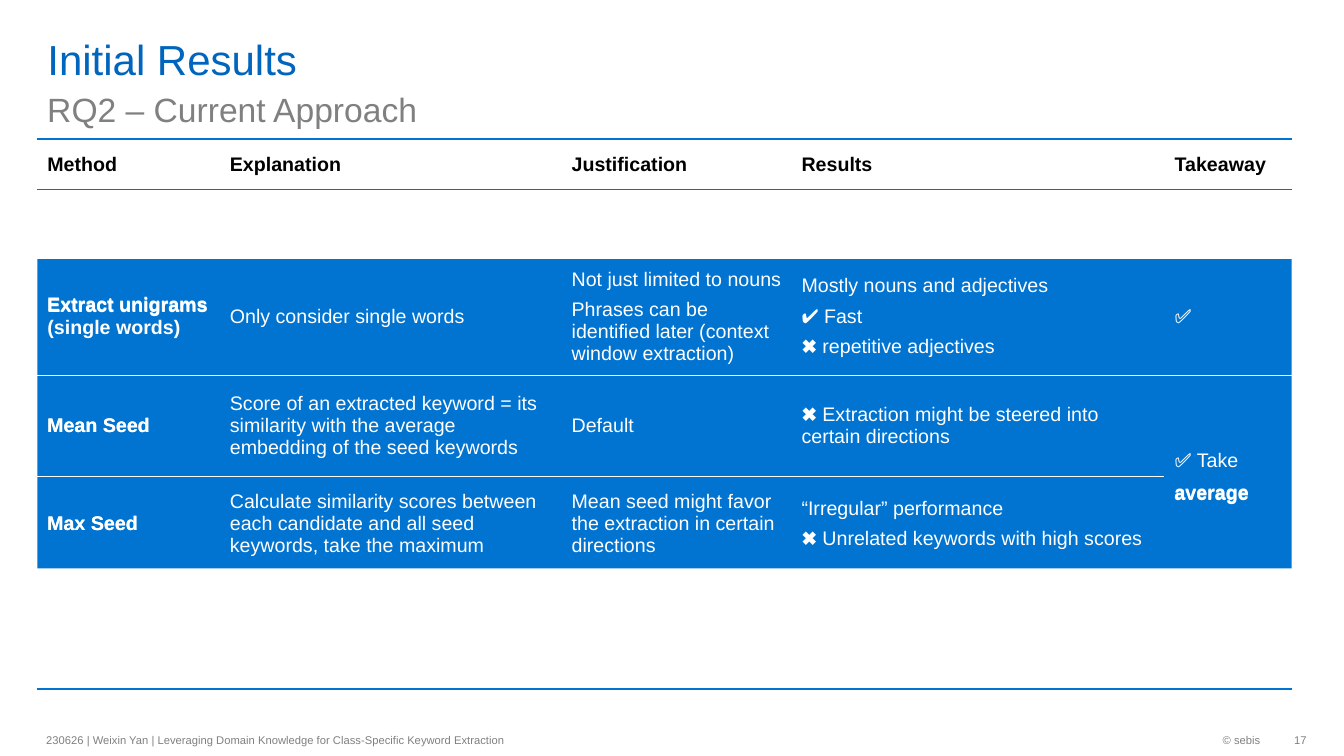
"""Build the initial results slide with its method comparison table."""
from dataclasses import dataclass, field

from lxml import etree
from pptx import Presentation
from pptx.dml.color import RGBColor
from pptx.enum import shapes, text
from pptx.oxml import ns
from pptx.util import Inches, Pt

TITLE_BLUE = RGBColor(0x00, 0x65, 0xBD)
BLUE = RGBColor(0x01, 0x73, 0xD0)
GREY = RGBColor(0x80, 0x80, 0x80)
DARK = RGBColor(0x59, 0x59, 0x59)
BLACK = RGBColor(0, 0, 0)
WHITE = RGBColor(0xFF, 0xFF, 0xFF)

NO_GRID_STYLE = "{2D5ABB26-0587-4C30-8999-92F81FD0307C}"
LEFT, ALIGN_RIGHT = text.PP_ALIGN.LEFT, text.PP_ALIGN.RIGHT
TOP, MIDDLE, BOTTOM = text.MSO_ANCHOR.TOP, text.MSO_ANCHOR.MIDDLE, text.MSO_ANCHOR.BOTTOM


@dataclass
class Label:
    text: str
    at: tuple[float, float, float, float]
    size: float = 14
    color: RGBColor = WHITE
    bold: bool = False
    align: text.PP_ALIGN = LEFT
    anchor: text.MSO_ANCHOR = TOP
    frame: dict = field(default_factory=dict)


@dataclass
class Rule:
    color: RGBColor
    width: float


@dataclass
class Row:
    height: float
    cells: tuple[str, ...] = ("",) * 5
    color: RGBColor = WHITE
    top: Rule | None = None
    bottom: Rule | None = None


HEADING = {"margin_top": 0, "margin_bottom": 0}
TITLE = Label("Initial Results", (0.37, 0.04, 11.58, 0.79), 30, TITLE_BLUE,
              anchor=BOTTOM, frame=HEADING)
LABELS = [
    Label("RQ2 – Current Approach", (0.37, 0.83, 11.58, 0.45), 24, GREY,
          anchor=BOTTOM, frame=HEADING),
    Label("© sebis", (10.26, 7.18, 2.34, 0.32), 8, GREY, align=ALIGN_RIGHT, anchor=MIDDLE),
    Label("17", (12.6, 7.18, 0.36, 0.32), 8, GREY, align=ALIGN_RIGHT, anchor=MIDDLE,
          frame={"margin_right": 0}),
    Label("230626 | Weixin Yan | Leveraging Domain Knowledge for Class-Specific Keyword Extraction",
          (0.36, 7.18, 6.3, 0.32), 8, GREY, anchor=MIDDLE),
]
HIGHLIGHTS = [
    Label("Extract unigrams", (0.37, 2.85, 2.78, 0.34), bold=True),
    Label("Mean Seed", (0.37, 4.05, 1.44, 0.34), bold=True),
    Label("Max Seed", (0.37, 5.02, 1.44, 0.34), bold=True),
    Label("average", (11.55, 4.72, 1.21, 0.34), bold=True),
]

FRAME_RULE, HEADER_RULE, ROW_RULE = Rule(BLUE, 1.5), Rule(DARK, 0.75), Rule(WHITE, 0.5)
COLUMNS = (1.81, 3.39, 2.28, 3.7, 1.26)
ROWS = [
    Row(0.5, ("Method", "Explanation", "Justification", "Results", "Takeaway"),
        BLACK, FRAME_RULE, HEADER_RULE),
    Row(0.68, top=HEADER_RULE),
    Row(1.16, ("Extract unigrams (single words)",
               "Only consider single words",
               "Not just limited to nouns\nPhrases can be identified later (context window extraction)",
               "Mostly nouns and adjectives\n✔ Fast\n✖️ repetitive adjectives",
               "✅"), bottom=ROW_RULE),
    Row(1.01, ("Mean Seed",
               "Score of an extracted keyword = its similarity with the average embedding"
               " of the seed keywords",
               "Default",
               "✖️ Extraction might be steered into certain directions",
               "✅ Take"), top=ROW_RULE, bottom=ROW_RULE),
    Row(0.93, ("Max Seed",
               "Calculate similarity scores between each candidate and all seed keywords,"
               " take the maximum",
               "Mean seed might favor the extraction in certain directions",
               "“Irregular” performance\n✖️ Unrelated keywords with high scores",
               "average"), top=ROW_RULE),
    Row(1.18, bottom=FRAME_RULE),
]
TAKE, AVERAGE = (3, 4), (4, 4)


def apply(target, values: dict) -> None:
    for name, value in values.items():
        setattr(target, name, value)


def style(p, size: float, color: RGBColor, bold: bool) -> None:
    apply(p.font, {"name": "Arial", "size": Pt(size), "bold": bold})
    p.font.color.rgb = color


def place(sp, label: Label) -> None:
    apply(sp, dict(zip(("left", "top", "width", "height"), map(Inches, label.at))))
    tf = sp.text_frame
    tf.text = label.text
    apply(tf, {"word_wrap": True, "auto_size": text.MSO_AUTO_SIZE.NONE,
               "vertical_anchor": label.anchor} | label.frame)
    p = tf.paragraphs[0]
    p.alignment = label.align
    style(p, label.size, label.color, label.bold)


def add_labels(s, labels: list[Label]) -> None:
    for label in labels:
        place(s.shapes.add_textbox(0, 0, 0, 0), label)


def add_border(cell, tag: str, rule: Rule | None) -> None:
    ln = etree.SubElement(cell._tc.get_or_add_tcPr(), ns.qn(tag))
    if rule is None:
        ln.set("w", "0")
        etree.SubElement(ln, ns.qn("a:noFill"))
        return
    ln.set("w", str(Pt(rule.width)))
    fill = etree.SubElement(ln, ns.qn("a:solidFill"))
    etree.SubElement(fill, ns.qn("a:srgbClr"), val=str(rule.color))


def add_results(s) -> None:
    table = s.shapes.add_table(len(ROWS), len(COLUMNS), Inches(0.37), Inches(1.38),
                               Inches(12.44), Inches(5.46)).table
    apply(table, {"first_row": False, "horz_banding": False})
    table._tbl.tblPr.find(ns.qn("a:tableStyleId")).text = NO_GRID_STYLE
    for column, width in zip(table.columns, COLUMNS):
        column.width = Inches(width)
    for i, row in enumerate(ROWS):
        table.rows[i].height = Inches(row.height)
        for j, words in enumerate(row.cells):
            cell = table.cell(i, j)
            add_border(cell, "a:lnT", None if (i, j) == AVERAGE else row.top)
            add_border(cell, "a:lnB", None if (i, j) == TAKE else row.bottom)
            cell.fill.background()
            apply(cell, {"text": words, "margin_right": Inches(0.05),
                         "vertical_anchor": {TAKE: BOTTOM, AVERAGE: TOP}.get((i, j), MIDDLE)})
            for p in cell.text_frame.paragraphs:
                p.space_after = Pt(6)
                style(p, 14, row.color, i == 0 or j == 0 or (i, j) == AVERAGE)


def main() -> None:
    prs = Presentation()
    apply(prs, {"slide_width": Inches(13.33), "slide_height": Inches(7.5)})
    s = prs.slides.add_slide(prs.slide_layouts[5])
    place(s.shapes.title, TITLE)
    panel = s.shapes.add_shape(shapes.MSO_SHAPE.RECTANGLE, Inches(0.37), Inches(2.57),
                               Inches(12.44), Inches(3.07))
    panel.shadow.inherit = False
    panel.fill.solid()
    panel.fill.fore_color.rgb = BLUE
    panel.line.fill.background()
    add_labels(s, LABELS)
    add_results(s)
    add_labels(s, HIGHLIGHTS)
    prs.save("out.pptx")


if __name__ == "__main__":
    main()
